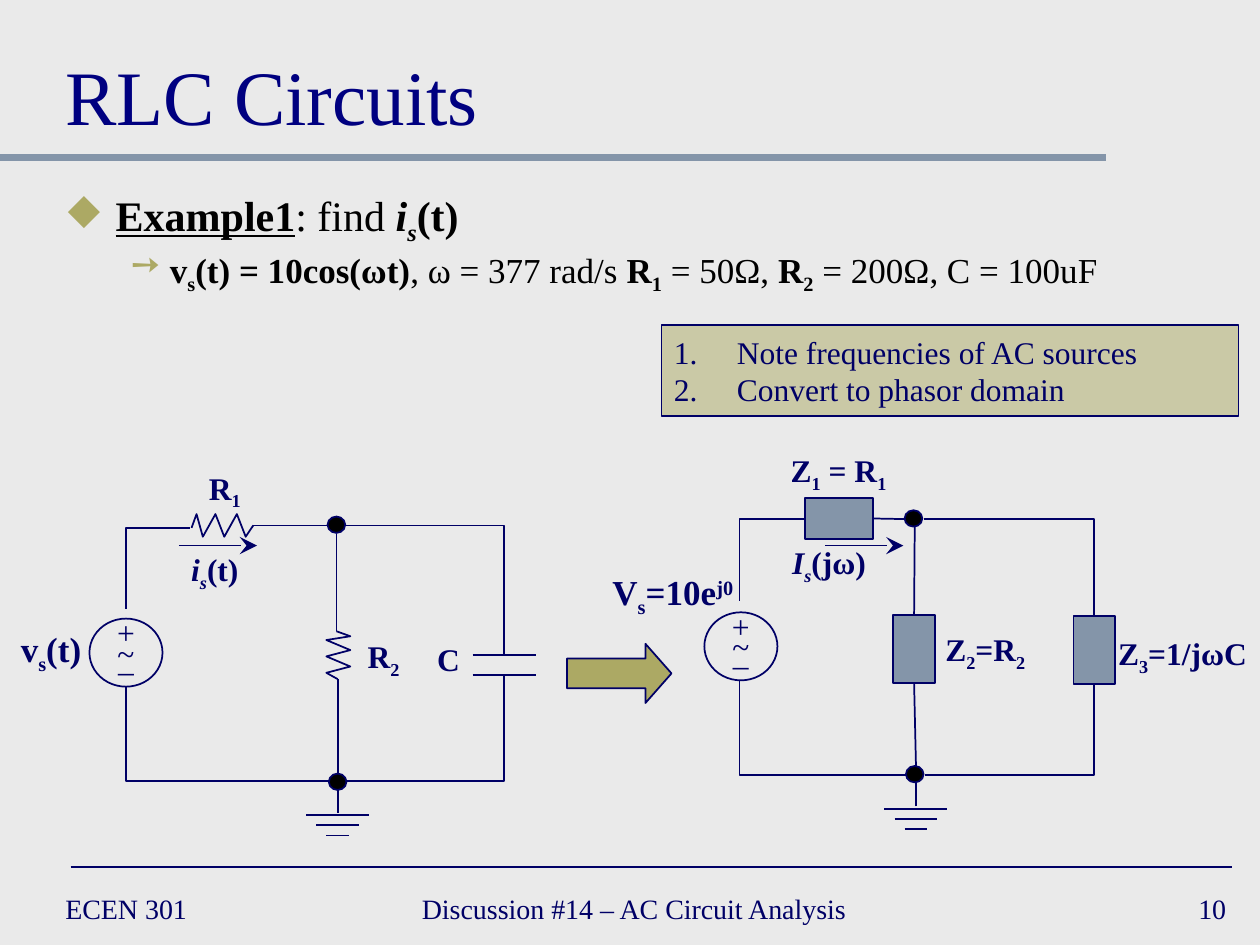
from lxml import etree
from pptx import Presentation
from pptx.dml.color import RGBColor
from pptx.enum.shapes import MSO_CONNECTOR, MSO_SHAPE
from pptx.enum.text import MSO_ANCHOR, PP_ALIGN
from pptx.oxml.ns import qn
from pptx.util import Inches, Pt

STRAIGHT, ELBOW = MSO_CONNECTOR.STRAIGHT, MSO_CONNECTOR.ELBOW
RECTANGLE, OVAL, RIGHT_ARROW = MSO_SHAPE.RECTANGLE, MSO_SHAPE.OVAL, MSO_SHAPE.RIGHT_ARROW
LEFT, CENTER, RIGHT = PP_ALIGN.LEFT, PP_ALIGN.CENTER, PP_ALIGN.RIGHT
TOP, MIDDLE, BOTTOM = MSO_ANCHOR.TOP, MSO_ANCHOR.MIDDLE, MSO_ANCHOR.BOTTOM
SIDE_TOP, SIDE_BOTTOM, SIDE_RIGHT = 0, 2, 3

FONT = "Times New Roman"
COLORS = {"page": "EAEAEA", "navy": "000066", "title": "000080", "black": "000000",
          "steel": "8495A9", "olive": "ACA964"}
FORMATS = {"b": {"bold": True}, "i": {"italic": True}, "u": {"underline": True}}
BASELINES = {"_": "-25000", "^": "30000"}


def rgb(name):
    return RGBColor.from_string(COLORS[name])


class CircuitPage:
    def __init__(self, page):
        self.page = page
        page.background.fill.solid()
        page.background.fill.fore_color.rgb = rgb("page")

    def add_spans(self, para, spans, size, color="navy", align=LEFT):
        """Each span is (text, marks): b, i, u, _ for subscript, ^ for superscript."""
        para.alignment = align
        for text, marks in spans:
            span = para.add_run()
            span.text = text
            values = {"name": FONT, "size": Pt(size)}
            for mark in marks:
                values.update(FORMATS.get(mark, {}))
                if mark in BASELINES:
                    span._r.get_or_add_rPr().set("baseline", BASELINES[mark])
            for key, value in values.items():
                setattr(span.font, key, value)
            span.font.color.rgb = rgb(color)

    def bullet(self, para, indent, hanging, tag, color=None, **values):
        props = para._p.get_or_add_pPr()
        props.set("marL", str(Inches(indent)))
        props.set("indent", str(-Inches(hanging)))
        if color:
            holder = etree.SubElement(props, qn("a:buClr"))
            etree.SubElement(holder, qn("a:srgbClr"), val=COLORS[color])
        etree.SubElement(props, qn(tag), **values)

    def text(self, x, y, width, height, lines, size=18, align=CENTER, wrap=False, anchor=TOP):
        box = self.page.shapes.add_textbox(*map(Inches, (x, y, width, height)))
        frame = box.text_frame
        frame.word_wrap = wrap
        frame.vertical_anchor = anchor
        for index, spans in enumerate(lines):
            para = frame.add_paragraph() if index else frame.paragraphs[0]
            self.add_spans(para, spans, size, align=align)
        return frame

    def outline(self, shape, fill=None):
        shape.shadow.inherit = False
        shape.line.color.rgb = rgb("navy")
        shape.line.width = Pt(1)
        if fill:
            shape.fill.solid()
            shape.fill.fore_color.rgb = rgb(fill)
        else:
            shape.fill.background()
        return shape

    def shape(self, kind, x, y, width, height, fill=None):
        return self.outline(
            self.page.shapes.add_shape(kind, *map(Inches, (x, y, width, height))), fill)

    def polyline(self, points):
        start, *rest = [(Inches(x), Inches(y)) for x, y in points]
        builder = self.page.shapes.build_freeform(*start)
        builder.add_line_segments(rest, close=False)
        self.outline(builder.convert_to_shape())

    def line(self, x1, y1, x2, y2, kind=STRAIGHT, color="navy", width=1, arrow=False):
        wire = self.page.shapes.add_connector(kind, *map(Inches, (x1, y1, x2, y2)))
        wire.line.color.rgb = rgb(color)
        wire.line.width = Pt(width)
        if arrow:
            etree.SubElement(wire._element.spPr.find(qn("a:ln")), qn("a:tailEnd"),
                             type="stealth", w="lg", len="lg")
        etree.SubElement(wire._element.spPr, qn("a:effectLst"))
        return wire

    def corner(self, x1, y1, x2, y2):
        """Wire that runs level first, then upright, with a single bend."""
        wire = self.line(x1, y1, x2, y2, ELBOW)
        wire._element.spPr.find(qn("a:prstGeom")).set("prst", "bentConnector2")

    def node(self, x, y):
        self.shape(OVAL, x - 0.07, y - 0.07, 0.14, 0.13, "black")

    def ground(self, x, y):
        self.line(x, y, x, y - 0.25)
        for half, drop in ((0.25, 0.02), (0.17, 0.1), (0.09, 0.18)):
            self.line(x - half, y + drop, x + half, y + drop)

    def source(self, x, y):
        self.shape(OVAL, x, y, 0.58, 0.54)
        self.text(x + 0.12, y - 0.09, 0.34, 0.7, [[("+", "")], [("–", "")]])
        self.text(x + 0.12, y + 0.07, 0.34, 0.4, [[("~", "")]])

    def label(self, x, y, width, spans, size=18):
        self.text(x, y, width, 0.4, [spans], size)


def add_frame(canvas):
    canvas.line(0, 1.25, 8.78, 1.25, color="steel", width=4)
    canvas.line(0.56, 6.88, 9.78, 6.88)
    for x, width, words, align in ((0.42, 2.17, "ECEN 301", LEFT),
                                   (3.25, 3.83, "Discussion #14 – AC Circuit Analysis", LEFT),
                                   (7.75, 2.08, "10", RIGHT)):
        canvas.text(x, 7, width, 0.42, [[(words, "")]], 16, align, True, MIDDLE)
    title = canvas.page.shapes.title
    title.left, title.top, title.width, title.height = map(Inches, (0.42, 0.17, 9.17, 1))
    title.text_frame.vertical_anchor = BOTTOM
    canvas.add_spans(title.text_frame.paragraphs[0], [("RLC Circuits", "")], 44, "title")


def add_problem(canvas):
    frame = canvas.text(0.44, 1.46, 9.14, 1.12, [], wrap=True)
    items = (
        (24, 0.38, 0.38, "◆", [("Example1", "bu"), (": find ", ""), ("i", "bi"),
                               ("s", "bi_"), ("(t)", "b")]),
        (20, 0.81, 0.31, "➙", [("v", "b"), ("s", "b_"), ("(t) = 10cos(ωt)", "b"),
                               (", ω = 377 rad/s ", ""), ("R", "b"), ("1", "b_"),
                               (" = 50Ω, ", ""), ("R", "b"), ("2", "b_"),
                               (" = 200Ω, C = 100uF", "")]))
    for index, (size, indent, hanging, sign, spans) in enumerate(items):
        para = frame.add_paragraph() if index else frame.paragraphs[0]
        canvas.bullet(para, indent, hanging, "a:buChar", "olive", char=sign)
        para.line_spacing = 0.9
        if index:
            para.space_before = Pt(4)
        canvas.add_spans(para, spans, size, "black")


def add_steps(canvas):
    box = canvas.shape(RECTANGLE, 5.25, 2.58, 4.58, 0.72, "olive")
    color = box._element.spPr.find(qn("a:solidFill"))[0]
    etree.SubElement(color, qn("a:alpha"), val="50000")
    frame = box.text_frame
    frame.word_wrap = True
    for index, words in enumerate(("Note frequencies of AC sources",
                                   "Convert to phasor domain")):
        para = frame.add_paragraph() if index else frame.paragraphs[0]
        canvas.bullet(para, 0.5, 0.5, "a:buAutoNum", type="arabicPeriod")
        canvas.add_spans(para, [(words, "")], 18)


def add_time_circuit(canvas):
    canvas.corner(2.61, 6.2, 1, 5.45)
    canvas.corner(1.51, 4.19, 1, 4.83)
    canvas.corner(2.74, 4.17, 4, 5.2)
    canvas.corner(2.75, 6.2, 4, 5.36)
    canvas.line(2.6, 4.17, 2.01, 4.17)
    canvas.line(2.67, 4.24, 2.67, 5.01)
    canvas.line(2.68, 6.14, 2.68, 5.39)
    canvas.polyline([(1.52, 4.19), (1.56, 4.08), (1.61, 4.26), (1.71, 4.08),
                     (1.78, 4.26), (1.88, 4.08), (1.95, 4.26), (2.01, 4.17)])
    canvas.polyline([(2.67, 5.01), (2.78, 5.05), (2.59, 5.08), (2.78, 5.16),
                     (2.59, 5.21), (2.78, 5.29), (2.59, 5.34), (2.68, 5.39)])
    for y in (5.2, 5.36):
        canvas.line(3.75, y, 4.25, y)
    canvas.ground(2.68, 6.45)
    canvas.node(2.67, 4.17)
    canvas.node(2.68, 6.21)
    canvas.source(0.71, 4.91)
    canvas.label(1.52, 3.67, 0.53, [("R", "b"), ("1", "b_")])
    canvas.label(2.81, 5.01, 0.47, [("R", "b"), ("2", "b_")])
    canvas.label(3.37, 5.03, 0.38, [("C", "b")])
    canvas.label(1.41, 4.32, 0.59, [("i", "bi"), ("s", "bi_"), ("(t)", "b")])
    canvas.label(0.06, 4.93, 0.69, [("v", "b"), ("s", "b_"), ("(t)", "b")], 20)
    canvas.line(1.42, 4.33, 2.04, 4.33, arrow=True)


def add_phasor_circuit(canvas):
    canvas.corner(7.19, 6.15, 5.87, 5.4)
    canvas.corner(6.39, 4.12, 5.87, 4.77)
    canvas.corner(7.33, 4.12, 8.68, 4.89)
    canvas.corner(7.34, 6.15, 8.68, 5.43)
    first = canvas.shape(RECTANGLE, 6.39, 3.95, 0.54, 0.33, "steel")
    second = canvas.shape(RECTANGLE, 7.09, 4.88, 0.33, 0.54, "steel")
    canvas.shape(RECTANGLE, 8.52, 4.89, 0.33, 0.54, "steel")
    canvas.line(7.18, 4.12, 6.93, 4.12).end_connect(first, SIDE_RIGHT)
    canvas.line(7.26, 4.18, 7.26, 4.88).end_connect(second, SIDE_TOP)
    canvas.line(7.27, 6.08, 7.26, 5.42).end_connect(second, SIDE_BOTTOM)
    canvas.ground(7.27, 6.4)
    canvas.node(7.25, 4.12)
    canvas.node(7.26, 6.15)
    canvas.source(5.59, 4.86)
    canvas.label(6.13, 3.53, 1.05, [("Z", "b"), ("1", "b_"), (" = R", "b"), ("1", "b_")])
    canvas.label(7.39, 4.95, 0.86, [("Z", "b"), ("2", "b_"), ("=R", "b"), ("2", "b_")])
    canvas.label(8.77, 4.98, 1.23, [("Z", "b"), ("3", "b_"), ("=1/jωC", "b")])
    canvas.label(6.18, 4.26, 0.8, [("I", "bi"), ("s", "bi_"), ("(jω)", "b")])
    canvas.label(4.75, 4.48, 1.18, [("V", "b"), ("s", "b_"), ("=10e", "b"), ("j0", "b^")], 20)
    canvas.line(6.55, 4.33, 7.17, 4.33, arrow=True)


def main():
    deck = Presentation()
    deck.slide_width, deck.slide_height = Inches(10), Inches(7.5)
    canvas = CircuitPage(deck.slides.add_slide(deck.slide_layouts[5]))
    add_frame(canvas)
    add_problem(canvas)
    add_time_circuit(canvas)
    add_phasor_circuit(canvas)
    arrow = canvas.shape(RIGHT_ARROW, 4.5, 5.11, 0.83, 0.47, "olive")
    arrow.adjustments[1] = 0.44
    add_steps(canvas)
    deck.save("out.pptx")


if __name__ == "__main__":
    main()
